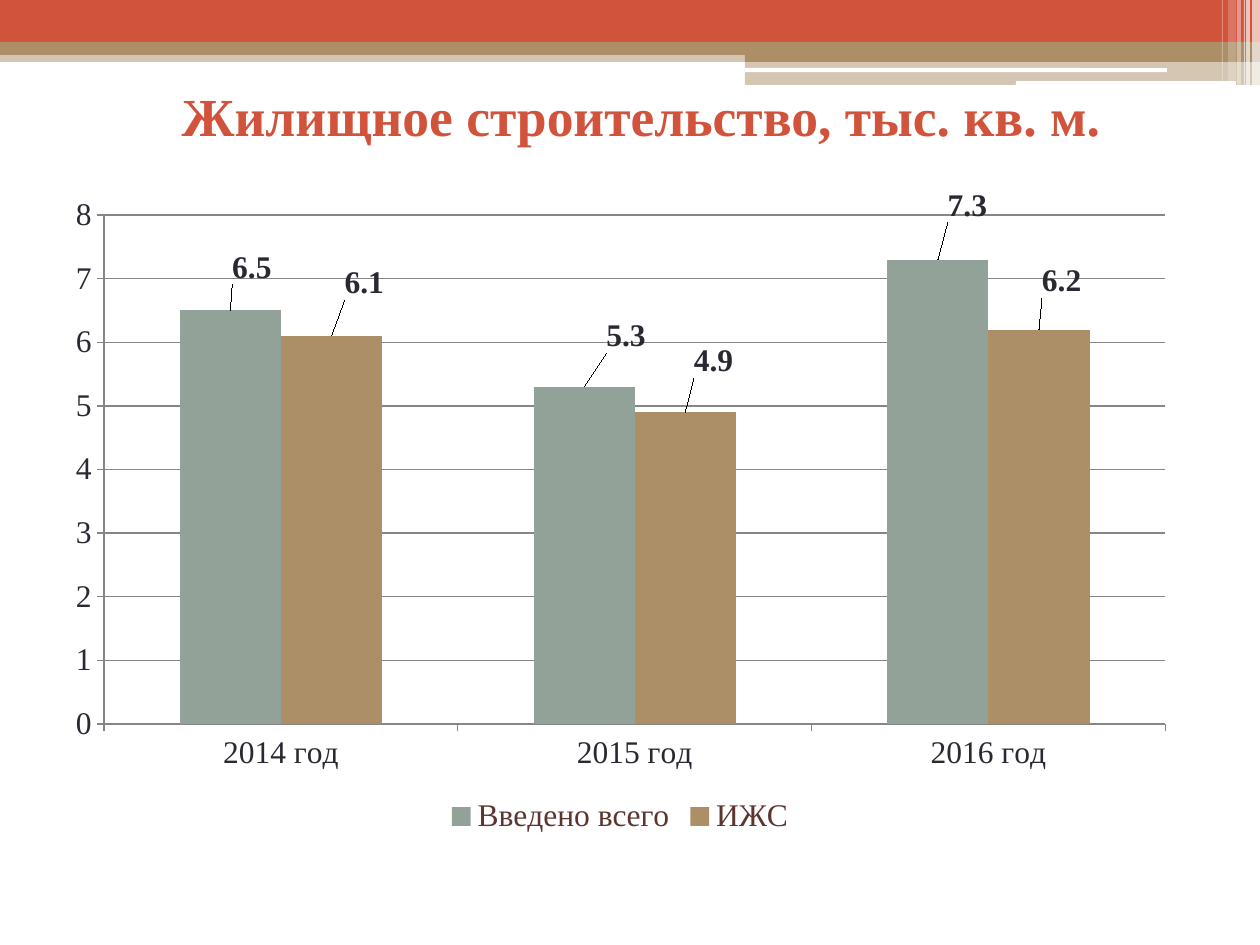
import pptx
import pptx.chart.data
import pptx.dml.color
import pptx.enum.chart
import pptx.enum.shapes
import pptx.enum.text
import pptx.oxml
import pptx.oxml.ns
import pptx.util

EMU_PER_PX = 914400 / 126
FONT = "Times New Roman"
RED, TAN, SAGE, WHITE = "D2533C", "AD8F67", "93A299", "FFFFFF"
INK, BROWN, GRID = "292934", "5B352E", "868686"

BANDS = [
    (0, 50, 1260, 12, TAN, 50),
    (0, 0, 1260, 43, RED, 100),
    (0, 42, 1260, 13, TAN, 100),
    (745, 49, 515, 13, TAN, 100),
    (745, 61, 515, 24, TAN, 50),
]
SLITS = [(745, 68, 422, 4), (1016, 81, 220, 5)]
STRIPES = [
    (1252, 8, 85, 65),
    (1246, 4, 85, 65),
    (1244, 1, 85, 60),
    (1237, 4, 85, 40),
    (1228, 8, 81, 20),
    (1222, 1, 81, 30),
]
YEARS = ["2014 год", "2015 год", "2016 год"]
HOUSING = [
    ("Введено всего", SAGE, [6.5, 5.3, 7.3], [(21, -21), (42, -29), (30, -32)]),
    ("ИЖС", TAN, [6.1, 4.9, 6.2], [(33, -31), (28, -29), (23, -26)]),
]


def px(length):
    """Turn a pixel length into EMU."""
    return pptx.util.Emu(round(length * EMU_PER_PX))


def paint(color_format, color):
    """Set a colour from a hex string."""
    color_format.rgb = pptx.dml.color.RGBColor.from_string(color)


def style_font(font, size, color, bold=False):
    """Give a font the slide's typeface, a size, a colour and a weight."""
    font.name = FONT
    font.size = pptx.util.Pt(size)
    font.bold = bold
    paint(font.color, color)


def add_block(slide, box, color, opacity=100, rounded=False):
    """Draw a borderless filled rectangle with an opacity in percent."""
    kinds = pptx.enum.shapes.MSO_SHAPE
    kind = kinds.ROUNDED_RECTANGLE if rounded else kinds.RECTANGLE
    block = slide.shapes.add_shape(kind, *map(px, box))
    block.shadow.inherit = False
    block.line.fill.background()
    block.fill.solid()
    paint(block.fill.fore_color, color)
    if opacity < 100:
        tint = block.fill._xPr.find(".//" + pptx.oxml.ns.qn("a:srgbClr"))
        alpha = tint.makeelement(pptx.oxml.ns.qn("a:alpha"), {"val": str(opacity * 1000)})
        tint.append(alpha)
    return block


def add_header(slide, left, top):
    """Draw the coloured bands, white slits and pale stripes."""
    for x, y, width, height, color, opacity in BANDS:
        add_block(slide, (left + x, top + y, width, height), color, opacity)
    for x, y, width, height in SLITS:
        slit = add_block(slide, (left + x, top + y, width, height), WHITE, rounded=True)
        slit.adjustments[0] = 0.17
    for x, width, height, opacity in STRIPES:
        add_block(slide, (left + x, top, width, height), WHITE, opacity)


def add_title(slide, box, wording):
    """Write the centred slide title."""
    frame = slide.shapes.add_textbox(*map(px, box)).text_frame
    frame.word_wrap = True
    frame.vertical_anchor = pptx.enum.text.MSO_ANCHOR.MIDDLE
    heading = frame.paragraphs[0]
    heading.text = wording
    heading.alignment = pptx.enum.text.PP_ALIGN.CENTER
    style_font(heading.font, 30.6, RED, True)


def manual_layout(target, **settings):
    """Build a manual chart layout from its named settings."""
    parts = f'<c:layoutTarget val="{target}"/>' if target else ""
    parts += "".join(f'<c:{name} val="{value}"/>' for name, value in settings.items())
    return pptx.oxml.parse_xml(
        f'<c:layout {pptx.oxml.ns.nsdecls("c")}><c:manualLayout>{parts}</c:manualLayout></c:layout>'
    )


def place_plot(chart, box, plot_box):
    """Fix the inner plot area, given relative to the chart box."""
    x, y, width, height = plot_box
    area = chart._chartSpace.chart.plotArea
    for layout in area.findall(pptx.oxml.ns.qn("c:layout")):
        area.remove(layout)
    area.insert(0, manual_layout(
        "inner", xMode="edge", yMode="edge",
        x=round(x / box[2], 3), y=round(y / box[3], 3),
        w=round(width / box[2], 3), h=round(height / box[3], 3),
    ))


def style_series(series, box, color, shifts):
    """Colour a series and shift its value labels off the columns."""
    series.format.fill.solid()
    paint(series.format.fill.fore_color, color)
    series.invert_if_negative = False
    series.data_labels.show_value = True
    style_font(series.data_labels.font, 18, INK, True)
    for index, (dx, dy) in enumerate(shifts):
        label = series.points[index].data_label
        style_font(label.font, 18, INK, True)
        label.position = pptx.enum.chart.XL_LABEL_POSITION.OUTSIDE_END
        entry = series._element.xpath(f"c:dLbls/c:dLbl[c:idx/@val='{index}']")[0]
        entry.insert(1, manual_layout("", x=round(dx / box[2], 3), y=round(dy / box[3], 3)))


def add_housing_chart(slide, box):
    """Add the clustered column chart of housing by year."""
    figures = pptx.chart.data.CategoryChartData()
    figures.categories = YEARS
    for name, _, values, _ in HOUSING:
        figures.add_series(name, values)
    kind = pptx.enum.chart.XL_CHART_TYPE.COLUMN_CLUSTERED
    chart = slide.shapes.add_chart(kind, *map(px, box), figures).chart
    style_font(chart.font, 18, INK)
    chart.has_title = False
    place_plot(chart, box, (51, 30, 1061, 509))

    columns = chart.plots[0]
    columns.gap_width = 150
    columns.overlap = 0
    columns.vary_by_categories = False
    for series, (_, color, _, shifts) in zip(columns.series, HOUSING):
        style_series(series, box, color, shifts)

    values, years = chart.value_axis, chart.category_axis
    values.minimum_scale, values.maximum_scale, values.major_unit = 0, 8, 1
    values.has_major_gridlines = True
    for axis in (values, years):
        axis.major_tick_mark = pptx.enum.chart.XL_TICK_MARK.OUTSIDE
    for line in (values.format.line, years.format.line, values.major_gridlines.format.line):
        line.width = pptx.util.Pt(0.75)
        paint(line.color, GRID)

    chart.has_legend = True
    chart.legend.position = pptx.enum.chart.XL_LEGEND_POSITION.BOTTOM
    chart.legend.include_in_layout = False
    style_font(chart.legend.font, 18, BROWN)


def main():
    """Build the housing slide and save it."""
    deck = pptx.Presentation()
    deck.slide_width, deck.slide_height = px(1260), px(945)
    slide = deck.slides.add_slide(deck.slide_layouts[6])
    add_header(slide, 0, 0)
    add_title(slide, (74, 86, 1134, 59), "Жилищное строительство, тыс. кв. м.")
    add_housing_chart(slide, (53, 185, 1134, 655))
    deck.save("out.pptx")


if __name__ == "__main__":
    main()
